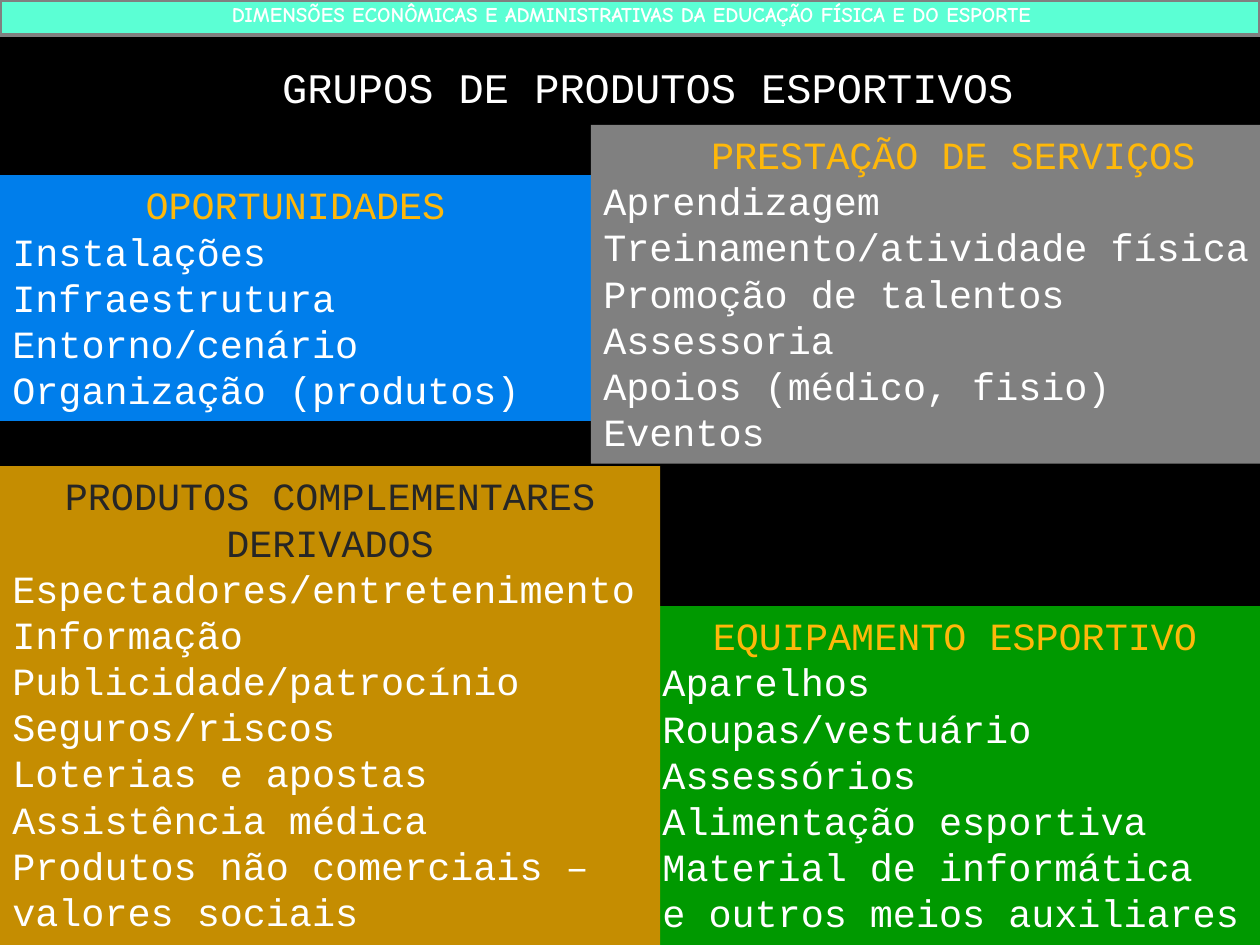
from pptx import Presentation
from pptx.dml.color import RGBColor
from pptx.enum import shapes, text
from pptx.util import Inches, Pt

MONO = "Courier New"
WHITE, GOLD, DARK, GREY = "FFFFFF", "FEB80A", "262626", "808080"
TITLE = "GRUPOS DE PRODUTOS ESPORTIVOS"
COURSE = "DIMENSÕES ECONÔMICAS E ADMINISTRATIVAS DA EDUCAÇÃO FÍSICA E DO ESPORTE"
GROUPS = [
    ((0, 1.39, 4.69, 1.95), "007EEB", GOLD, ["OPORTUNIDADES"],
     ["Instalações", "Infraestrutura", "Entorno/cenário", "Organização (produtos)"]),
    ((5.16, 4.81, 4.84, 2.69), "009900", GOLD, ["EQUIPAMENTO ESPORTIVO"],
     ["Aparelhos", "Roupas/vestuário", "Assessórios", "Alimentação esportiva",
      "Material de informática\ve outros meios auxiliares"]),
    ((4.69, 0.99, 5.75, 2.69), GREY, GOLD, ["PRESTAÇÃO DE SERVIÇOS"],
     ["Aprendizagem", "Treinamento/atividade física", "Promoção de talentos",
      "Assessoria", "Apoios (médico, fisio)", "Eventos"]),
    ((0, 3.7, 5.24, 3.8), "C58D01", DARK, ["PRODUTOS COMPLEMENTARES", "DERIVADOS"],
     ["Espectadores/entretenimento", "Informação", "Publicidade/patrocínio",
      "Seguros/riscos", "Loterias e apostas", "Assistência médica",
      "Produtos não comerciais – valores sociais"]),
]


def paint(target, color):
    target.solid()
    target.fore_color.rgb = RGBColor.from_string(color)


def style(para, size, color, face=MONO, align=text.PP_ALIGN.CENTER):
    para.alignment = align
    para.font.size = Pt(size)
    para.font.name = face
    paint(para.font.fill, color)


def add_rect(slide, box, color):
    rect = slide.shapes.add_shape(shapes.MSO_SHAPE.RECTANGLE, *map(Inches, box))
    rect.shadow.inherit = False
    paint(rect.fill, color)
    rect.line.fill.background()
    return rect


def add_group(slide, box, fill, color, heads, items):
    frame = add_rect(slide, box, fill).text_frame
    frame.word_wrap = True
    frame.vertical_anchor = text.MSO_ANCHOR.TOP
    for i, line in enumerate(heads + items):
        para = frame.add_paragraph() if i else frame.paragraphs[0]
        para.text = line
        if i < len(heads):
            style(para, 22, color)
        else:
            style(para, 22, WHITE, align=text.PP_ALIGN.LEFT)


def add_title(slide):
    title = slide.shapes.title
    title.left, title.top, title.width, title.height = map(Inches, (2.09, 0.44, 6.1, 0.51))
    frame = title.text_frame
    frame.text = TITLE
    frame.word_wrap = False
    frame.auto_size = text.MSO_AUTO_SIZE.NONE
    frame.vertical_anchor = text.MSO_ANCHOR.TOP
    style(frame.paragraphs[0], 24, WHITE)


def add_band(slide):
    band = add_rect(slide, (0, 0, 10, 0.28), "5BFFD4")
    paint(band.line.fill, GREY)
    band.line.width = Pt(2)
    label = slide.shapes.add_textbox(*map(Inches, (0.35, 0, 9.33, 0.26)))
    frame = label.text_frame
    frame.word_wrap = True
    para = frame.paragraphs[0]
    para.text = COURSE
    para.line_spacing = 0.8
    style(para, 12, WHITE, "Comic Neue")
    para.font.bold = True


def main():
    deck = Presentation()
    deck.slide_width, deck.slide_height = Inches(10), Inches(7.5)
    slide = deck.slides.add_slide(deck.slide_layouts[5])
    paint(slide.background.fill, "000000")
    add_title(slide)
    for group in GROUPS:
        add_group(slide, *group)
    add_band(slide)
    deck.save("out.pptx")


if __name__ == "__main__":
    main()
